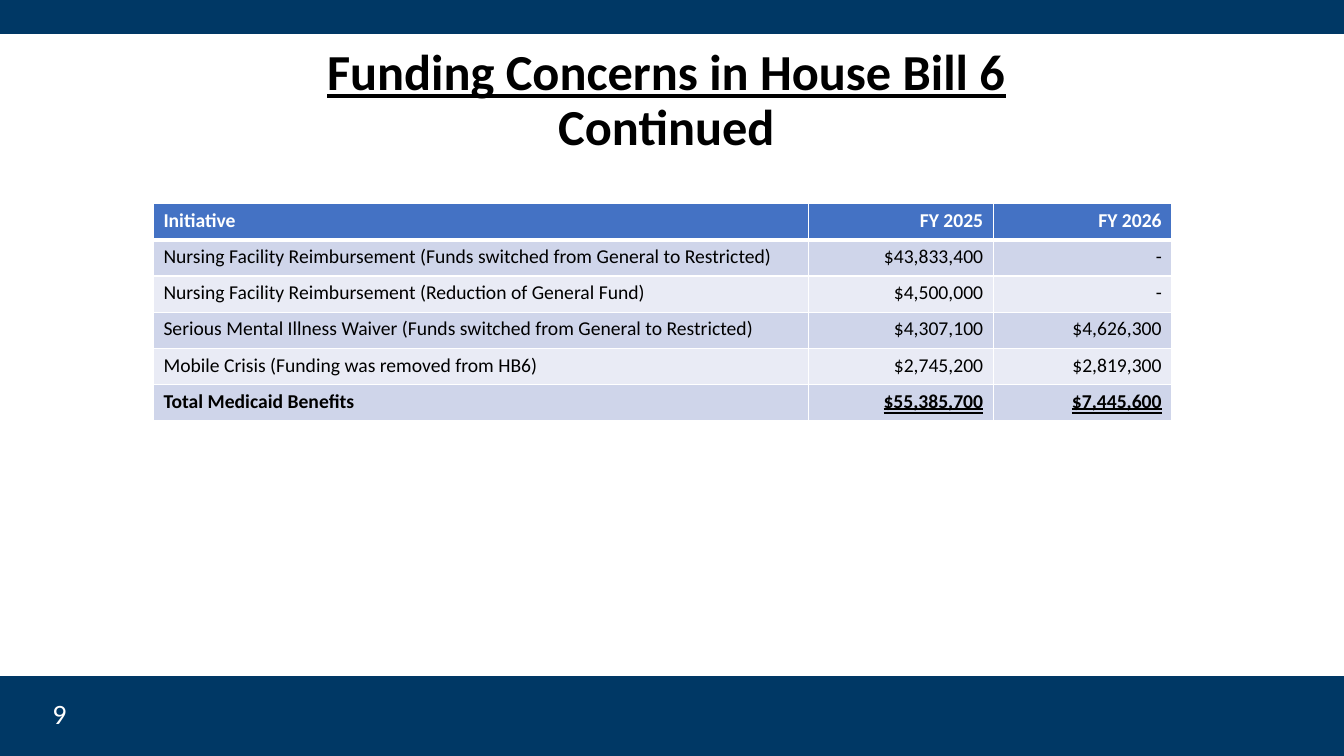
from lxml.etree import SubElement
from pptx import Presentation
from pptx.dml.color import RGBColor
from pptx.enum.shapes import MSO_SHAPE
from pptx.enum.text import MSO_ANCHOR, MSO_AUTO_SIZE, MSO_UNDERLINE, PP_ALIGN
from pptx.oxml.ns import qn
from pptx.util import Pt

COLORS = {
    "navy": "003865",
    "header": "4472C4",
    "odd_row": "CFD5EA",
    "even_row": "E9EBF5",
    "white": "FFFFFF",
    "black": "000000",
}
FONT = "Calibri"
PAGE_WIDTH, PAGE_HEIGHT = 960, 540

FUNDING = [
    ("Initiative", "FY 2025", "FY 2026"),
    ("Nursing Facility Reimbursement (Funds switched from General to Restricted)", "$43,833,400", "-"),
    ("Nursing Facility Reimbursement (Reduction of General Fund)", "$4,500,000", "-"),
    ("Serious Mental Illness Waiver (Funds switched from General to Restricted)", "$4,307,100", "$4,626,300"),
    ("Mobile Crisis (Funding was removed from HB6)", "$2,745,200", "$2,819,300"),
    ("Total Medicaid Benefits", "$55,385,700", "$7,445,600"),
]
COLUMN_WIDTHS = (468, 132, 127.5)


def color(name):
    return RGBColor.from_string(COLORS[name])


def style_span(span, size, color_name, bold=False, underline=False):
    span.font.name = FONT
    span.font.size = Pt(size)
    span.font.bold = bold
    span.font.underline = underline
    span.font.color.rgb = color(color_name)


def add_band(page, top, height):
    band = page.shapes.add_shape(MSO_SHAPE.RECTANGLE, 0, Pt(top), Pt(PAGE_WIDTH), Pt(height))
    band.shadow.inherit = False
    band.fill.solid()
    band.fill.fore_color.rgb = color("navy")
    band.line.fill.background()


def fill_title(page, left, top, width, height):
    title = page.shapes.title
    title.left, title.top, title.width, title.height = Pt(left), Pt(top), Pt(width), Pt(height)
    frame = title.text_frame
    frame.text = "Funding Concerns in House Bill 6\vContinued"
    frame.auto_size = MSO_AUTO_SIZE.NONE
    frame.vertical_anchor = MSO_ANCHOR.MIDDLE
    para = frame.paragraphs[0]
    para.alignment = PP_ALIGN.CENTER
    para.line_spacing = 0.9
    for span, underline in zip(para.runs, (True, False)):
        style_span(span, 36, "black", bold=True, underline=underline)


def add_page_number(page, left, top, width, height):
    box = page.shapes.add_textbox(Pt(left), Pt(top), Pt(width), Pt(height))
    frame = box.text_frame
    frame.word_wrap = True
    frame.vertical_anchor = MSO_ANCHOR.MIDDLE
    frame.text = "9"
    para = frame.paragraphs[0]
    para.alignment = PP_ALIGN.RIGHT
    style_span(para.runs[0], 20, "white")


def set_borders(cell, widths):
    properties = cell._tc.get_or_add_tcPr()
    for side, width in widths.items():
        line = SubElement(properties, qn(f"a:ln{side}"), w=str(Pt(width)))
        fill = SubElement(line, qn("a:solidFill"))
        SubElement(fill, qn("a:srgbClr"), val=COLORS["white"])


def add_funding_table(page, left, top, row_height):
    last = len(FUNDING) - 1
    frame = page.shapes.add_table(
        len(FUNDING), len(COLUMN_WIDTHS), Pt(left), Pt(top),
        Pt(sum(COLUMN_WIDTHS)), Pt(row_height * len(FUNDING)))
    table = frame.table
    for column, width in zip(table.columns, COLUMN_WIDTHS):
        column.width = Pt(width)
    for row_index, values in enumerate(FUNDING):
        table.rows[row_index].height = Pt(row_height)
        is_header, is_total = row_index == 0, row_index == last
        fill_name = "header" if is_header else "odd_row" if row_index % 2 else "even_row"
        for column_index, value in enumerate(values):
            cell = table.cell(row_index, column_index)
            # The rule below the header is heavier than the rest
            set_borders(cell, {"L": 1, "R": 1,
                               "T": 3 if row_index == 1 else 1,
                               "B": 3 if is_header else 1})
            cell.fill.solid()
            cell.fill.fore_color.rgb = color(fill_name)
            cell.text_frame.text = value
            para = cell.text_frame.paragraphs[0]
            para.alignment = PP_ALIGN.RIGHT if column_index else PP_ALIGN.LEFT
            underline = MSO_UNDERLINE.DOUBLE_LINE if is_total and column_index else False
            style_span(para.runs[0], 14, "white" if is_header else "black",
                       bold=is_header or is_total, underline=underline)


def main():
    deck = Presentation()
    deck.slide_width, deck.slide_height = Pt(PAGE_WIDTH), Pt(PAGE_HEIGHT)
    page = deck.slides.add_slide(deck.slide_layouts[5])
    # Top and bottom bands
    add_band(page, 0, 24.3)
    add_band(page, 483, 57)
    # Title, page number and table
    fill_title(page, 114.5, 35.3, 723, 75)
    add_page_number(page, 18.7, 500.4, 36, 18.7)
    add_funding_table(page, 109.6, 145.4, 25.9)
    deck.save("out.pptx")


if __name__ == "__main__":
    main()
